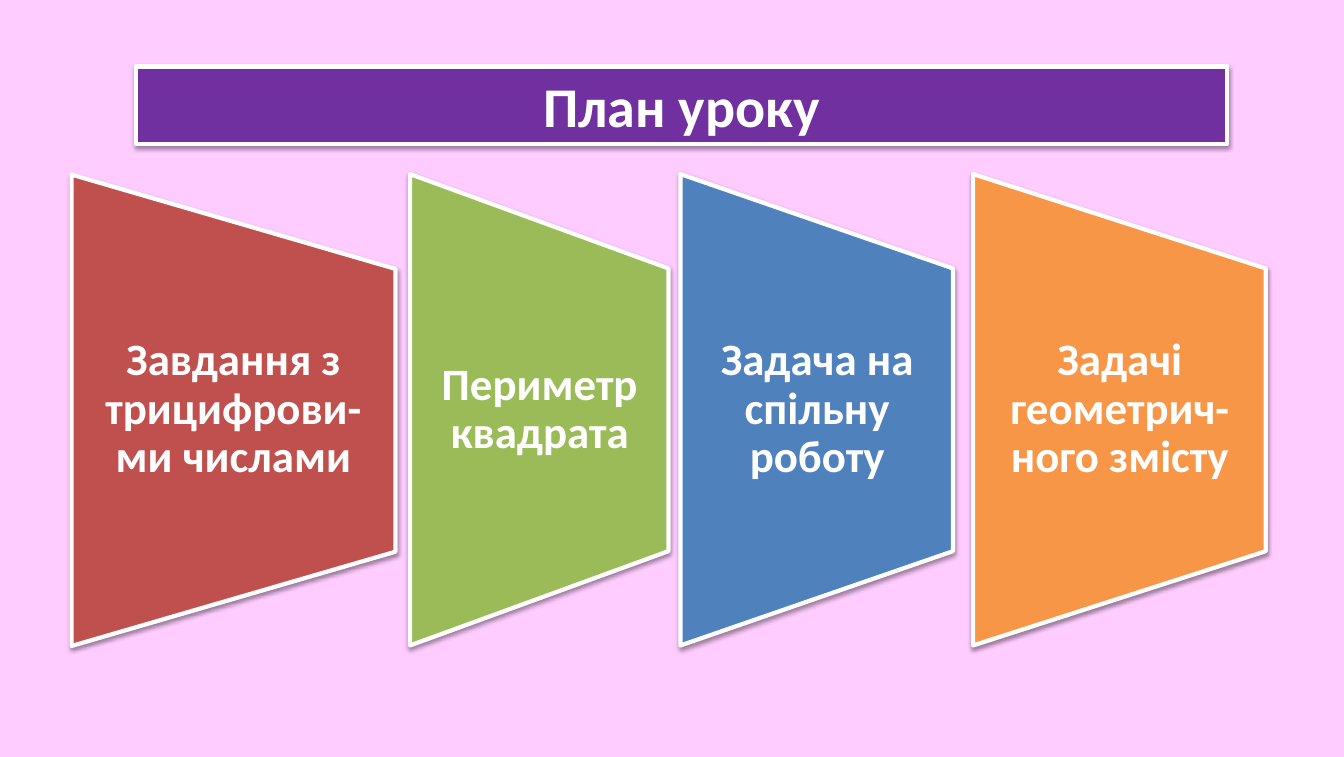
"""Build the lesson plan slide: a title bar above four tapered panels."""
from lxml import etree
from pptx import Presentation
from pptx.dml.color import RGBColor as RGB
from pptx.enum.shapes import MSO_SHAPE as SHAPE
from pptx.enum.text import MSO_ANCHOR as ANCHOR, MSO_AUTO_SIZE as AUTO, PP_ALIGN as ALIGN
from pptx.oxml import parse_xml
from pptx.oxml.ns import nsdecls, qn
from pptx.util import Pt

PX = 9144
THEME = {
    "font": "Calibri", "title_size": 40, "panel_size": 32, "edge_width": 3,
    "background": "FFCCFF", "title": "7030A0", "light": "FFFFFF",
    "red": "C0504D", "green": "9BBB59", "blue": "4F81BD", "orange": "F79646",
}


def style_shape(sp, color):
    """Apply fill, white edge and a soft downward shadow."""
    sp.fill.solid()
    sp.fill.fore_color.rgb = RGB.from_string(THEME[color])
    sp.line.color.rgb = RGB.from_string(THEME["light"])
    sp.line.width = Pt(THEME["edge_width"])
    sp.shadow.inherit = False
    effects = sp._element.spPr.find(qn("a:effectLst"))
    effects.append(parse_xml(
        f'<a:outerShdw {nsdecls("a")} blurRad="40000" dist="20000" dir="5400000" rotWithShape="0">'
        '<a:srgbClr val="000000"><a:alpha val="38000"/></a:srgbClr></a:outerShdw>'))


def write_text(sp, text, size, inset_x, inset_y):
    """Write one centred bold white paragraph and return it."""
    tf = sp.text_frame
    tf.text = text
    tf.word_wrap = True
    tf.auto_size = AUTO.NONE
    tf.vertical_anchor = ANCHOR.MIDDLE
    tf.margin_left = tf.margin_right = inset_x * PX
    tf.margin_top = tf.margin_bottom = inset_y * PX
    p = tf.paragraphs[0]
    p.alignment = ALIGN.CENTER
    font = p.runs[0].font
    font.name = THEME["font"]
    font.size = Pt(THEME[size])
    font.bold = True
    font.color.rgb = RGB.from_string(THEME["light"])
    return p


prs = Presentation()
prs.slide_width, prs.slide_height = 1332 * PX, 750 * PX
s = prs.slides.add_slide(prs.slide_layouts[5])
s.background.fill.solid()
s.background.fill.fore_color.rgb = RGB.from_string(THEME["background"])

title = s.shapes.title
title.left, title.top, title.width, title.height = 135 * PX, 66 * PX, 1081 * PX, 77 * PX
style_shape(title, "title")
write_text(title, "План уроку", "title_size", 10, 5)

PANEL_HEIGHT, TEXT_HEIGHT, CENTER_Y = 467, 280, 406
panels = [
    (71, 321, "red", "Завдання з трицифрови-ми числами"),
    (407, 256, "green", "Периметр квадрата"),
    (675, 270, "blue", "Задача на спільну роботу"),
    (965, 290, "orange", "Задачі геометрич-ного змісту"),
]
for left, width, color, text in panels:
    sp = s.shapes.add_shape(
        SHAPE.FLOWCHART_MANUAL_OPERATION,
        (left + (width - PANEL_HEIGHT) // 2) * PX, (CENTER_Y - width // 2) * PX,
        PANEL_HEIGHT * PX, width * PX)
    sp.rotation = 270
    style_shape(sp, color)
    label = s.shapes.add_textbox(
        left * PX, (CENTER_Y - TEXT_HEIGHT // 2) * PX, width * PX, TEXT_HEIGHT * PX)
    p = write_text(label, text, "panel_size", 22, 0)
    p.line_spacing = 0.9
    p.space_after = Pt(11)

prs.save("out.pptx")
